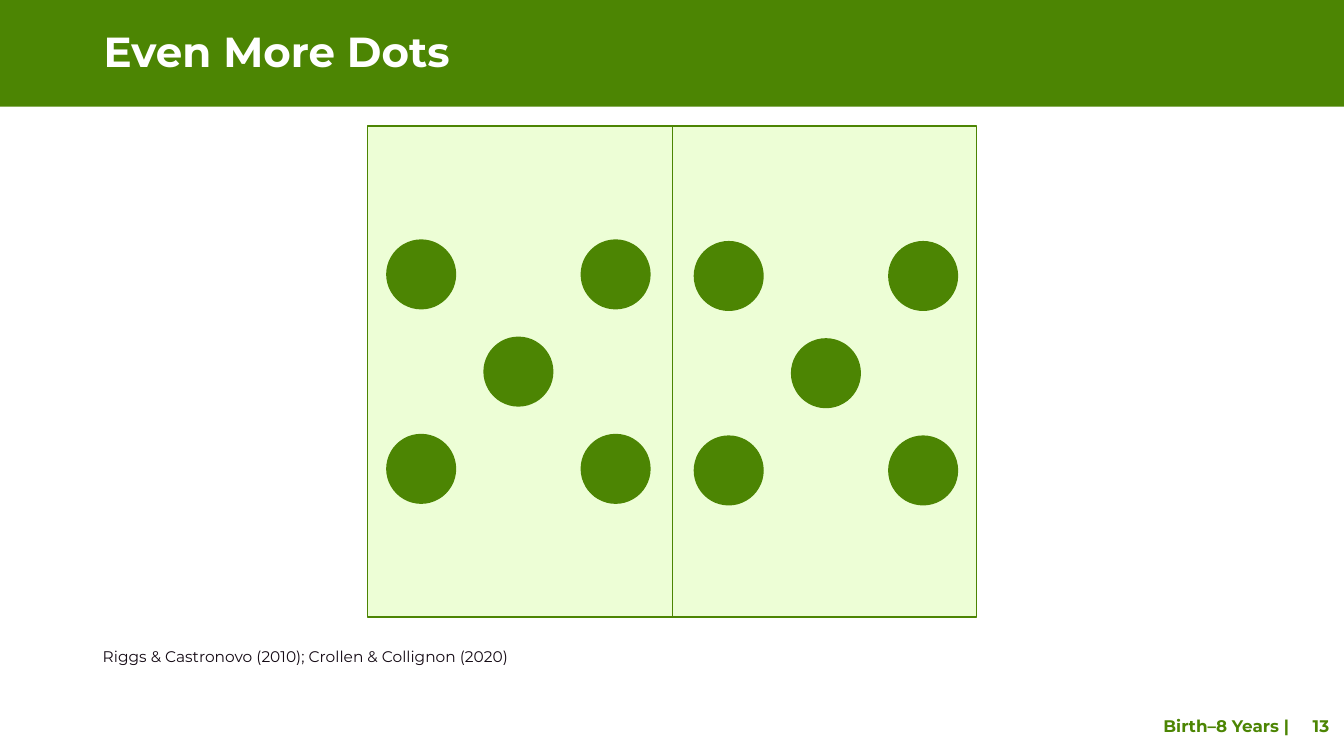
from lxml.etree import SubElement
from pptx import Presentation
from pptx.dml.color import RGBColor
from pptx.enum.shapes import MSO_CONNECTOR, MSO_SHAPE
from pptx.enum.text import MSO_ANCHOR
from pptx.oxml.ns import qn
from pptx.util import Cm, Pt

COLORS = {"green": "4C8503", "pale": "EDFED6", "white": "FFFFFF", "ink": "140A14"}
FONT = "Montserrat"
DOT_SIZE = 1.73
DOT_PITCH = 2.45
FIVE_DOTS = [(0, 0), (2, 0), (1, 1), (0, 2), (2, 2)]


def rgb(name):
    return RGBColor.from_string(COLORS[name])


def add_text(s, text, x, y, w, h, *, size, color, bold=False, line_spacing=1.0,
             space_after=0, anchor=MSO_ANCHOR.TOP, left_inset=0.25, right_tab=None):
    """Add a one-paragraph text box; right_tab is a right-aligned tab stop in cm."""
    tf = s.shapes.add_textbox(Cm(x), Cm(y), Cm(w), Cm(h)).text_frame
    tf.word_wrap = True
    tf.vertical_anchor = anchor
    tf.margin_left = Cm(left_inset)
    p = tf.paragraphs[0]
    p.line_spacing = line_spacing
    p.space_after = Pt(space_after)
    if right_tab:
        tabs = SubElement(p._p.get_or_add_pPr(), qn("a:tabLst"))
        SubElement(tabs, qn("a:tab"), pos=str(Cm(right_tab)), algn="r")
    r = p.add_run()
    r.text = text
    r.font.name = FONT
    r.font.size = Pt(size)
    r.font.bold = bold
    r.font.color.rgb = rgb(color)


def add_filled(shapes, kind, x, y, w, h, fill, line=None):
    sp = shapes.add_shape(kind, Cm(x), Cm(y), Cm(w), Cm(h))
    sp.shadow.inherit = False
    sp.fill.solid()
    sp.fill.fore_color.rgb = rgb(fill)
    if line:
        sp.line.color.rgb = rgb(line)
        sp.line.width = Pt(1)
    else:
        sp.line.fill.background()
    return sp


def add_five_dots(shapes, x, y):
    for col, row in FIVE_DOTS:
        add_filled(shapes, MSO_SHAPE.OVAL, x + col * DOT_PITCH, y + row * DOT_PITCH,
                   DOT_SIZE, DOT_SIZE, "green", "green")


def add_divider(shapes, card):
    """Join the middles of the card's top and bottom sides."""
    line = shapes.add_connector(MSO_CONNECTOR.STRAIGHT, 0, 0, 0, 0)
    line.begin_connect(card, 0)
    line.end_connect(card, 2)
    line.line.color.rgb = rgb("green")
    line.line.width = Pt(1)
    SubElement(line._element.spPr, qn("a:effectLst"))


def add_domino(s):
    shapes = s.shapes.add_group_shape().shapes
    card = add_filled(shapes, MSO_SHAPE.RECTANGLE, 9.27, 3.18, 15.34, 12.37,
                      "pale", "green")
    add_five_dots(shapes, 9.75, 6.05)
    add_five_dots(shapes, 17.5, 6.09)
    add_divider(shapes, card)


def main():
    prs = Presentation()
    prs.slide_width, prs.slide_height = Cm(33.87), Cm(19.05)
    s = prs.slides.add_slide(prs.slide_layouts[6])

    add_text(s, "Birth–8 Years |\t13", 24.1, 17.78, 9.68, 1.02, size=12,
             color="green", bold=True, anchor=MSO_ANCHOR.MIDDLE,
             left_inset=5.22, right_tab=4.18)
    add_filled(s.shapes, MSO_SHAPE.RECTANGLE, 0, 0, 33.87, 2.69, "green")
    add_text(s, "Even More Dots", 2.36, 0.66, 30.1, 1.42, size=30,
             color="white", bold=True, line_spacing=0.9)
    add_domino(s)
    add_text(s, "Riggs & Castronovo (2010); Crollen & Collignon (2020)",
             2.34, 16.1, 29.21, 0.79, size=11, color="ink",
             line_spacing=1.2, space_after=6)
    prs.save("out.pptx")


if __name__ == "__main__":
    main()
